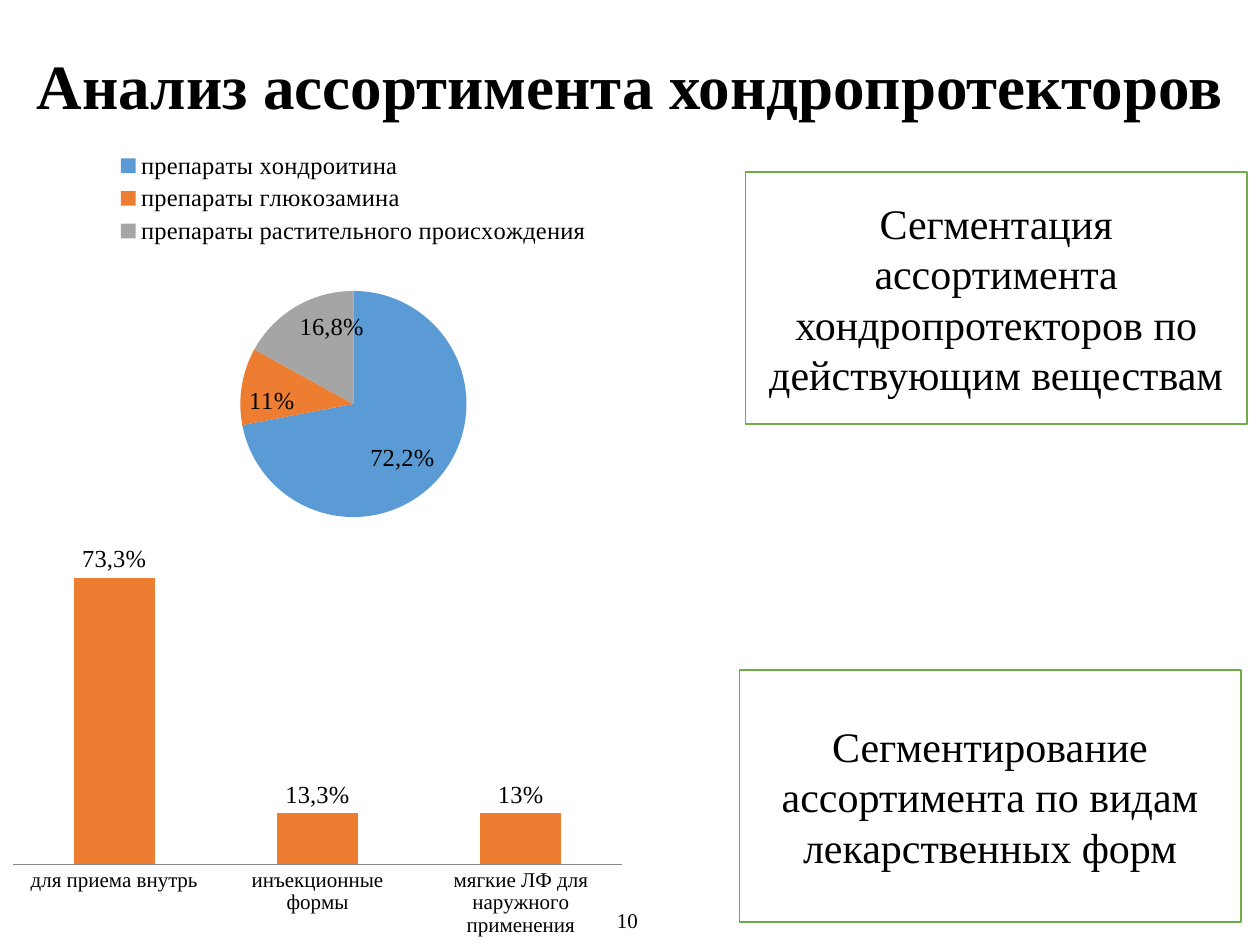
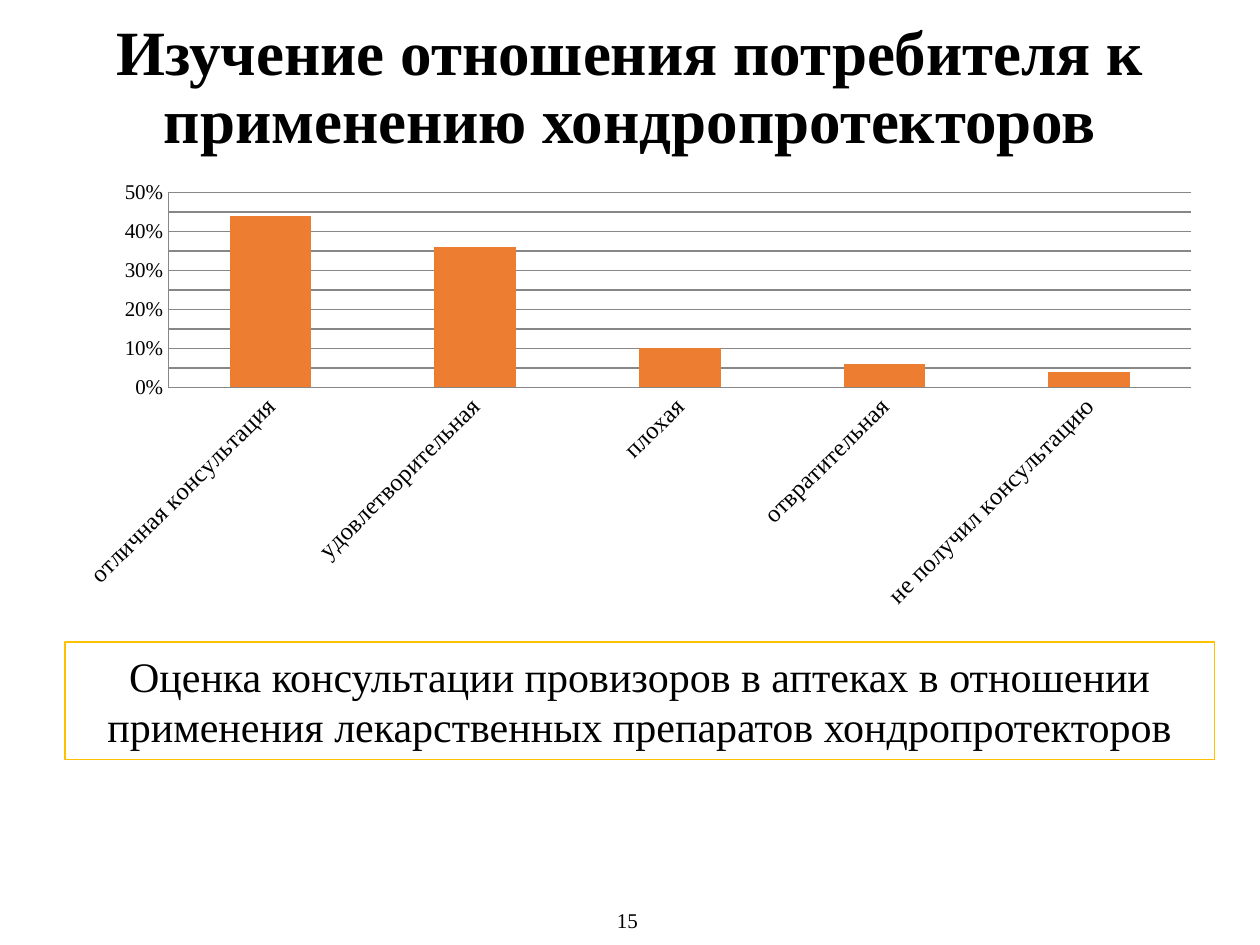
from copy import deepcopy
from lxml.etree import SubElement
from pptx import Presentation
from pptx.chart.data import CategoryChartData
from pptx.dml.color import RGBColor
from pptx.enum.chart import XL_CHART_TYPE, XL_LABEL_POSITION, XL_LEGEND_POSITION, XL_TICK_MARK
from pptx.enum.shapes import MSO_SHAPE
from pptx.enum.text import MSO_ANCHOR, MSO_AUTO_SIZE, PP_ALIGN
from pptx.oxml.ns import qn
from pptx.util import Pt

BLACK = RGBColor(0x00, 0x00, 0x00)
WHITE = RGBColor(0xFF, 0xFF, 0xFF)
BLUE = RGBColor(0x5B, 0x9B, 0xD5)
ORANGE = RGBColor(0xED, 0x7D, 0x31)
GRAY = RGBColor(0xA5, 0xA5, 0xA5)
GREEN = RGBColor(0x70, 0xAD, 0x47)
GOLD = RGBColor(0xFF, 0xC0, 0x00)
AXIS = RGBColor(0x87, 0x87, 0x87)
FACE = "Times New Roman"


def style(font, size, bold=False):
    font.name = FACE
    font.size = Pt(size)
    font.bold = bold
    font.color.rgb = BLACK


def write(frame, text, size, bold=False):
    frame.word_wrap = True
    frame.auto_size = MSO_AUTO_SIZE.NONE
    frame.vertical_anchor = MSO_ANCHOR.MIDDLE
    frame.text = text
    para = frame.paragraphs[0]
    para.alignment = PP_ALIGN.CENTER
    style(para.font, size, bold)
    return para


def add_page(deck, title, number):
    slide = deck.slides.add_slide(deck.slide_layouts[5])
    head = slide.shapes.title
    head.left, head.top, head.width, head.height = Pt(0), Pt(11.5), Pt(720), Pt(78.5)
    write(head.text_frame, title, 36, True).line_spacing = 0.9
    foot = slide.shapes.add_textbox(Pt(237), Pt(511), Pt(243), Pt(29))
    write(foot.text_frame, number, 12)
    return slide


def add_note(slide, box, text, color):
    note = slide.shapes.add_shape(MSO_SHAPE.RECTANGLE, *map(Pt, box))
    note.shadow.inherit = False
    note.fill.solid()
    note.fill.fore_color.rgb = WHITE
    note.line.color.rgb = color
    note.line.width = Pt(1)
    write(note.text_frame, text, 24)


def place(node, index, area, inner=False):
    for old in node.findall(qn("c:layout")):
        node.remove(old)
    layout = SubElement(node, qn("c:layout"))
    node.insert(index, layout)
    manual = SubElement(layout, qn("c:manualLayout"))
    parts = [("layoutTarget", "inner")] if inner else []
    parts += [("xMode", "edge"), ("yMode", "edge"), *zip("xywh", area)]
    for name, value in parts:
        SubElement(manual, qn("c:" + name)).set("val", str(value))


def add_chart(slide, box, kind, data, area, form="0%"):
    source = CategoryChartData(number_format=form)
    source.categories = list(data)
    source.add_series("Series 1", list(data.values()))
    chart = slide.shapes.add_chart(kind, *map(Pt, box), source).chart
    chart.has_title = False
    chart.has_legend = False
    style(chart.font, 10)
    place(chart._chartSpace.chart.plotArea, 0, area, True)
    return chart


def add_labels(chart, spot, special):
    plot = chart.plots[0]
    plot.has_data_labels = True
    labels = plot.data_labels
    labels.number_format = "0%"
    labels.number_format_is_linked = False
    labels.position = spot
    style(labels.font, 14)
    for index, text in special.items():
        label = plot.series[0].points[index].data_label
        label.text_frame.text = text
        style(label.text_frame.paragraphs[0].font, 14)
        label.position = spot
    return labels


def add_pie(slide, box, data, special):
    chart = add_chart(slide, box, XL_CHART_TYPE.PIE, data, (0.34, 0.38, 0.32, 0.55), "General")
    plot = chart.plots[0]
    plot.vary_by_categories = True
    for index, color in enumerate((BLUE, ORANGE, GRAY)):
        fill = plot.series[0].points[index].format.fill
        fill.solid()
        fill.fore_color.rgb = color
    add_labels(chart, XL_LABEL_POSITION.INSIDE_END, special)
    for labels in (plot.data_labels, plot.series[0].data_labels):
        labels.number_format = "0%"
        labels.number_format_is_linked = False
        labels.position = XL_LABEL_POSITION.INSIDE_END
        style(labels.font, 14)
        labels.show_percentage = True
        labels.show_value = False
    chart.has_legend = True
    legend = chart.legend
    legend.position = XL_LEGEND_POSITION.TOP
    legend.include_in_layout = False
    style(legend.font, 14)
    place(legend._element, 1, (0.16, 0.03, 0.68, 0.25))


def add_bars(slide, box, data, area, peak, size):
    chart = add_chart(slide, box, XL_CHART_TYPE.COLUMN_CLUSTERED, data, area)
    plot = chart.plots[0]
    plot.gap_width = 150
    plot.vary_by_categories = False
    fill = plot.series[0].format.fill
    fill.solid()
    fill.fore_color.rgb = ORANGE
    for axis, points in ((chart.category_axis, size), (chart.value_axis, 12)):
        axis.major_tick_mark = axis.minor_tick_mark = XL_TICK_MARK.NONE
        axis.has_major_gridlines = False
        axis.format.line.color.rgb = AXIS
        style(axis.tick_labels.font, points)
    scale = chart.value_axis
    scale.minimum_scale = 0
    scale.maximum_scale = peak
    scale.tick_labels.number_format = "0%"
    scale.tick_labels.number_format_is_linked = False
    return chart


def add_forms(slide, box, data, special):
    chart = add_bars(slide, box, data, (0.02, 0.02, 0.96, 0.78), 0.8, 12)
    chart.value_axis.visible = False
    spot = XL_LABEL_POSITION.OUTSIDE_END
    add_labels(chart, spot, special)
    labels = chart.plots[0].series[0].data_labels
    labels.number_format = "0%"
    labels.number_format_is_linked = False
    labels.position = spot
    style(labels.font, 14)
    labels.show_value = True


def add_ratings(slide, box, data):
    chart = add_bars(slide, box, data, (0.09, 0.04, 0.89, 0.44), 0.5, 14)
    scale = chart.value_axis
    scale.major_unit = 0.1
    scale.minor_unit = 0.05
    scale.has_major_gridlines = scale.has_minor_gridlines = True
    scale.major_gridlines.format.line.color.rgb = AXIS
    major, minor = (scale._element.find(qn(f"c:{rank}Gridlines")) for rank in ("major", "minor"))
    minor.append(deepcopy(major[0]))
    body = chart.category_axis._element.find(qn("c:txPr")).find(qn("a:bodyPr"))
    body.set("rot", "-2700000")
    body.set("vert", "horz")


def build_range(deck):
    slide = add_page(deck, "Анализ ассортимента хондропротекторов", "10")
    drugs = {
        "препараты хондроитина": 72,
        "препараты глюкозамина": 11,
        "препараты растительного происхождения": 17,
    }
    add_pie(slide, (0, 77, 404, 235), drugs, {0: "72,2%", 2: "16,8%"})
    add_note(slide, (426, 98.5, 286.5, 144),
             "Сегментация ассортимента хондропротекторов по действующим веществам", GREEN)
    forms = {
        "для приема внутрь": 0.73,
        "инъекционные формы": 0.13,
        "мягкие ЛФ для наружного применения": 0.13,
    }
    add_forms(slide, (0, 310, 363, 230), forms, {0: "73,3%", 1: "13,3%"})
    add_note(slide, (422.5, 383, 286.5, 144),
             "Сегментирование ассортимента по видам лекарственных форм", GREEN)


def build_survey(deck):
    slide = add_page(deck, "Изучение отношения потребителя к применению хондропротекторов", "15")
    add_note(slide, (37, 367, 657, 67),
             "Оценка консультации провизоров в аптеках в отношении применения "
             "лекарственных препаратов хондропротекторов", GOLD)
    ratings = {
        "отличная консультация": 0.44,
        "удовлетворительная": 0.36,
        "плохая": 0.1,
        "отвратительная": 0.06,
        "не получил консультацию": 0.04,
    }
    add_ratings(slide, (37, 100, 657, 253), ratings)


def main():
    deck = Presentation()
    deck.slide_width, deck.slide_height = Pt(720), Pt(540)
    build_range(deck)
    build_survey(deck)
    deck.save("out.pptx")


if __name__ == "__main__":
    main()
